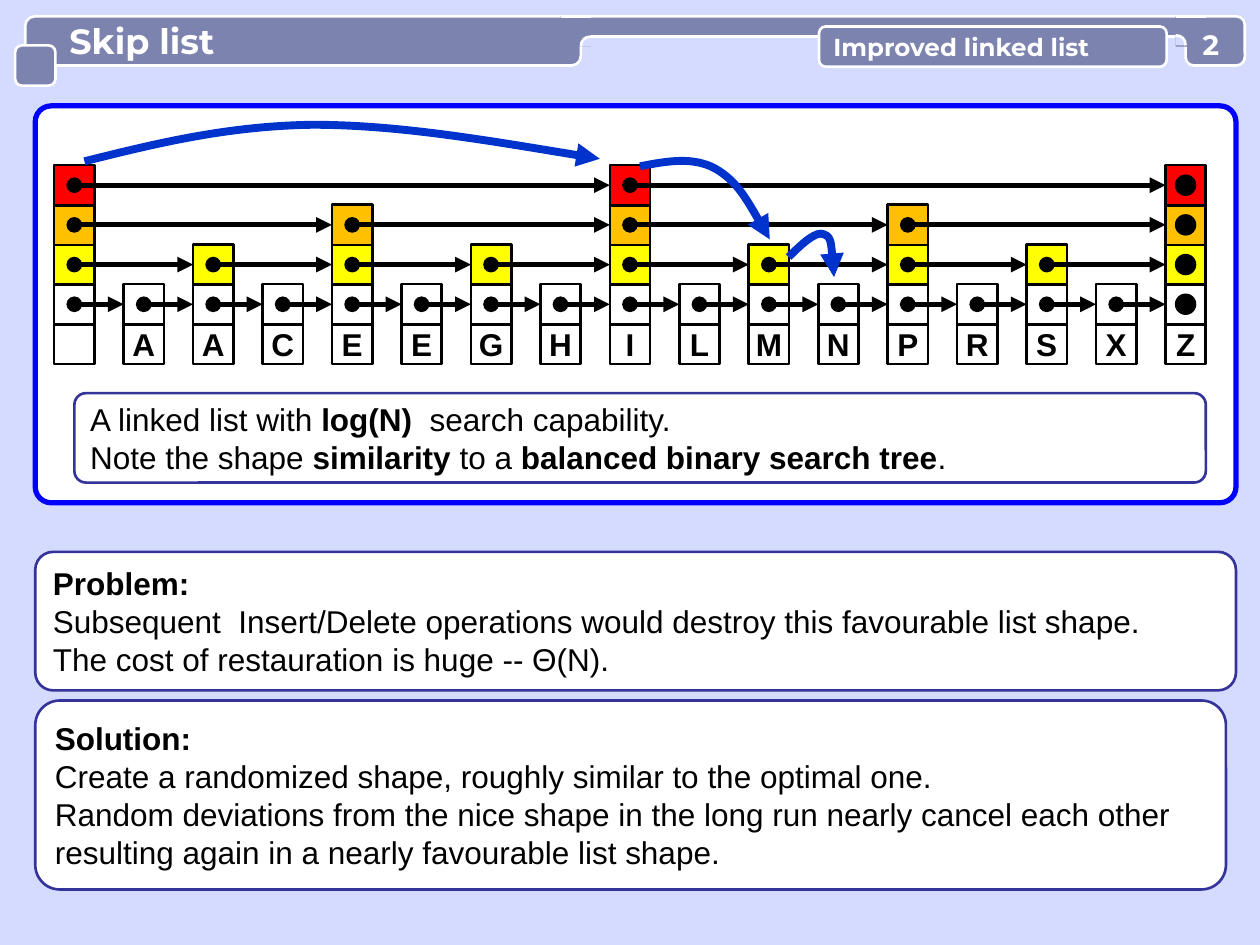
from lxml.etree import SubElement
from pptx import Presentation
from pptx.dml.color import RGBColor
from pptx.enum.shapes import MSO_CONNECTOR, MSO_SHAPE
from pptx.enum.text import MSO_ANCHOR, MSO_AUTO_SIZE, PP_ALIGN
from pptx.oxml.ns import qn
from pptx.util import Inches, Pt

LETTERS = ["", *"AACEEGHILMNPRSXZ"]
HEIGHTS = [4, 1, 2, 1, 3, 1, 2, 1, 4, 1, 2, 1, 3, 1, 2, 1, 4]
LEVELS = ["FFFFFF", "FFFF00", "FFC000", "FF0000"]
LEFT, RIGHT, TOP, BOTTOM, CELL = 0.43, 9.25, 1.31, 2.57, 0.32
PITCH = (RIGHT - LEFT) / (len(LETTERS) - 1)
STEP = (BOTTOM - TOP) / len(LEVELS)
BAR, BACK, BLUE, FRAME = "7D83AF", "D5DAFF", "0033CC", "333399"
HOPS = [
    [(0.67, 1.28), (1.23, 1.14), (1.8, 1), (2.48, 0.99),
     (3.16, 0.99), (3.96, 1.13), (4.76, 1.26)],
    [(5.08, 1.32), (5.29, 1.28), (5.5, 1.24), (5.68, 1.34),
     (5.85, 1.44), (5.98, 1.67), (6.11, 1.9)],
    [(6.26, 2.04), (6.37, 1.93), (6.48, 1.83), (6.54, 1.86),
     (6.6, 1.88), (6.61, 2.04), (6.62, 2.2)],
]
NOTES = [
    ((0.59, 3.12, 8.98, 0.71), [
        "A linked list with *log(N)*  search capability.",
        "Note the shape *similarity* to a* balanced binary search tree*."]),
    ((0.28, 4.38, 9.53, 1.1), [
        "*Problem:*",
        "Subsequent  Insert/Delete operations would destroy this favourable list shape.",
        "The cost of restauration is huge -- Θ(N)."]),
    ((0.28, 5.56, 9.45, 1.5), [
        "*Solution:*",
        "Create a randomized shape, roughly similar to the optimal one.",
        "Random deviations from the nice shape in the long run nearly cancel each other",
        "resulting again in a nearly favourable list shape."]),
]


def rgb(color):
    """Turn a hex string into a colour."""
    return RGBColor.from_string(color)


def paint(sp, fill, line, width):
    """Set fill and outline, None meaning neither."""
    sp.shadow.inherit = False
    if fill:
        sp.fill.solid()
        sp.fill.fore_color.rgb = rgb(fill)
    else:
        sp.fill.background()
    if line:
        sp.line.color.rgb = rgb(line)
        sp.line.width = Pt(width)
    else:
        sp.line.fill.background()


def add_box(s, at, fill, line=None, width=1.5, kind=MSO_SHAPE.RECTANGLE, adj=None):
    """Add a preset shape."""
    sp = s.shapes.add_shape(kind, *map(Inches, at))
    paint(sp, fill, line, width)
    if adj is not None:
        sp.adjustments[0] = adj
    return sp


def add_round(s, at, adj, fill=BAR, line="FFFFFF", width=1.5):
    """Add a rounded rectangle."""
    return add_box(s, at, fill, line, width, MSO_SHAPE.ROUNDED_RECTANGLE, adj)


def style(r, size, font, color, bold):
    """Format a run."""
    r.font.size, r.font.name, r.font.bold = Pt(size), font, bold
    r.font.color.rgb = rgb(color)


def set_label(sp, text, size, font="Montserrat", color="FFFFFF", align=PP_ALIGN.LEFT):
    """Write one bold unwrapped line in a shape."""
    tf = sp.text_frame
    tf.text = text
    tf.word_wrap = False
    tf.vertical_anchor = MSO_ANCHOR.MIDDLE
    p = tf.paragraphs[0]
    p.alignment = align
    style(p.runs[0], size, font, color, True)


def add_note(s, at, lines):
    """Add a framed text where asterisks enclose bold words."""
    tf = add_round(s, at, 0.13, "FFFFFF", FRAME).text_frame
    tf.word_wrap = True
    tf.vertical_anchor = MSO_ANCHOR.MIDDLE
    for i, line in enumerate(lines):
        p = tf.add_paragraph() if i else tf.paragraphs[0]
        p.alignment = PP_ALIGN.LEFT
        for j, part in enumerate(line.split("*")):
            if part:
                r = p.add_run()
                r.text = part
                style(r, 18, "Arial", "000000", j % 2 == 1)


def add_ends(sp, **ends):
    """Put line ends such as headEnd or tailEnd on an outline."""
    ln = sp.line._get_or_add_ln()
    for name, kind in ends.items():
        SubElement(ln, qn(f"a:{name}"), type=kind)


def add_line(s, x1, y1, x2, y2, color, width):
    """Add a straight connector without shadow."""
    c = s.shapes.add_connector(MSO_CONNECTOR.STRAIGHT, *map(Inches, (x1, y1, x2, y2)))
    c.line.color.rgb = rgb(color)
    c.line.width = Pt(width)
    SubElement(c._element.spPr, qn("a:effectLst"))
    return c


def add_curve(s, points, fill=None, line=None, width=1.5):
    """Add a chain of Bezier curves through a start and triples of points."""
    start, *rest = [(Inches(x), Inches(y)) for x, y in points]
    builder = s.shapes.build_freeform(*start)
    builder.add_line_segments(rest, close=False)
    sp = builder.convert_to_shape()
    geom = next(sp._element.iter(qn("a:path")))
    steps = geom.findall(qn("a:lnTo"))
    for i in range(0, len(steps), 3):
        bezier = SubElement(geom, qn("a:cubicBezTo"))
        for step in steps[i:i + 3]:
            bezier.append(step[0])
            geom.remove(step)
    paint(sp, fill, line, width)
    return sp


def add_joint(s, left, x, y, dx):
    """Join two header bars with a rounded inner corner."""
    add_box(s, (left, 0.13, 0.24, 0.24), BAR)
    add_line(s, left, 0.13, left + 0.24, 0.13, "FFFFFF", 1.5)
    arc = [(x, y), (x + dx * 0.6, y), (x + dx, y + 0.03), (x + dx, y + 0.08)]
    add_curve(s, arc + [(x, y + 0.08)] * 3, BACK)
    add_curve(s, arc, line="FFFFFF")


def add_skip_list(s):
    """Draw the towers, their links and the end dots."""
    xs = [LEFT + PITCH * i for i in range(len(LETTERS))]
    for x, letter, height in zip(xs, LETTERS, HEIGHTS):
        sp = add_box(s, (x, BOTTOM, CELL, CELL), "FFFFFF", "000000")
        if letter:
            set_label(sp, letter, 18, "Arial", "000000", PP_ALIGN.CENTER)
        for k in range(height):
            add_box(s, (x, BOTTOM - STEP * (k + 1), CELL, CELL), LEVELS[k], "000000")
    for k in range(len(LEVELS)):
        y = BOTTOM - STEP * (k + 1) + CELL / 2
        stops = [x for x, height in zip(xs, HEIGHTS) if height > k]
        for a, b in zip(stops, stops[1:]):
            link = add_line(s, a + CELL / 2, y, b, y, "000000", 3)
            add_ends(link, headEnd="oval", tailEnd="triangle")
        add_box(s, (RIGHT + 0.08, y - 0.08, 0.16, 0.16), "000000", "000000", 0.75,
                MSO_SHAPE.OVAL)


def add_header(s):
    """Draw the header bars with title, topic and page number."""
    at = (0.2, 0.13, 4.41, 0.39)
    add_round(s, at, 0.19)
    title = s.shapes.title
    title.left, title.top, title.width, title.height = map(Inches, at)
    set_label(title, "Skip list", 20)
    title.text_frame.auto_size = MSO_AUTO_SIZE.NONE
    title.text_frame.margin_left = Inches(0.35)
    title._element.getparent().append(title._element)
    add_round(s, (4.61, 0.13, 4.88, 0.16), 0.5)
    add_joint(s, 4.45, 4.69, 0.29, -0.08)
    add_round(s, (0.12, 0.36, 0.32, 0.32), 0.17)
    add_round(s, (9.41, 0.13, 0.47, 0.39), 0.17)
    add_joint(s, 9.33, 9.33, 0.28, 0.08)
    set_label(add_round(s, (6.5, 0.21, 2.76, 0.32), 0.17), "Improved linked list", 14)
    page = s.shapes.add_textbox(*map(Inches, (9.41, 0.22, 0.4, 0.27)))
    set_label(page, "2", 16, align=PP_ALIGN.CENTER)
    tf = page.text_frame
    tf.word_wrap = True
    tf.margin_left = tf.margin_right = tf.margin_top = tf.margin_bottom = 0


def main():
    """Build and save the slide."""
    prs = Presentation()
    prs.slide_width, prs.slide_height = Inches(10), Inches(7.5)
    s = prs.slides.add_slide(prs.slide_layouts[5])
    s.background.fill.solid()
    s.background.fill.fore_color.rgb = rgb(BACK)
    add_round(s, (0.28, 0.84, 9.53, 3.15), 0.04, "FFFFFF", "0000FF", 3)
    add_skip_list(s)
    for at, lines in NOTES:
        add_note(s, at, lines)
    add_header(s)
    for points in HOPS:
        add_ends(add_curve(s, points, line=BLUE, width=4.5), tailEnd="triangle")
    prs.save("out.pptx")


if __name__ == "__main__":
    main()
